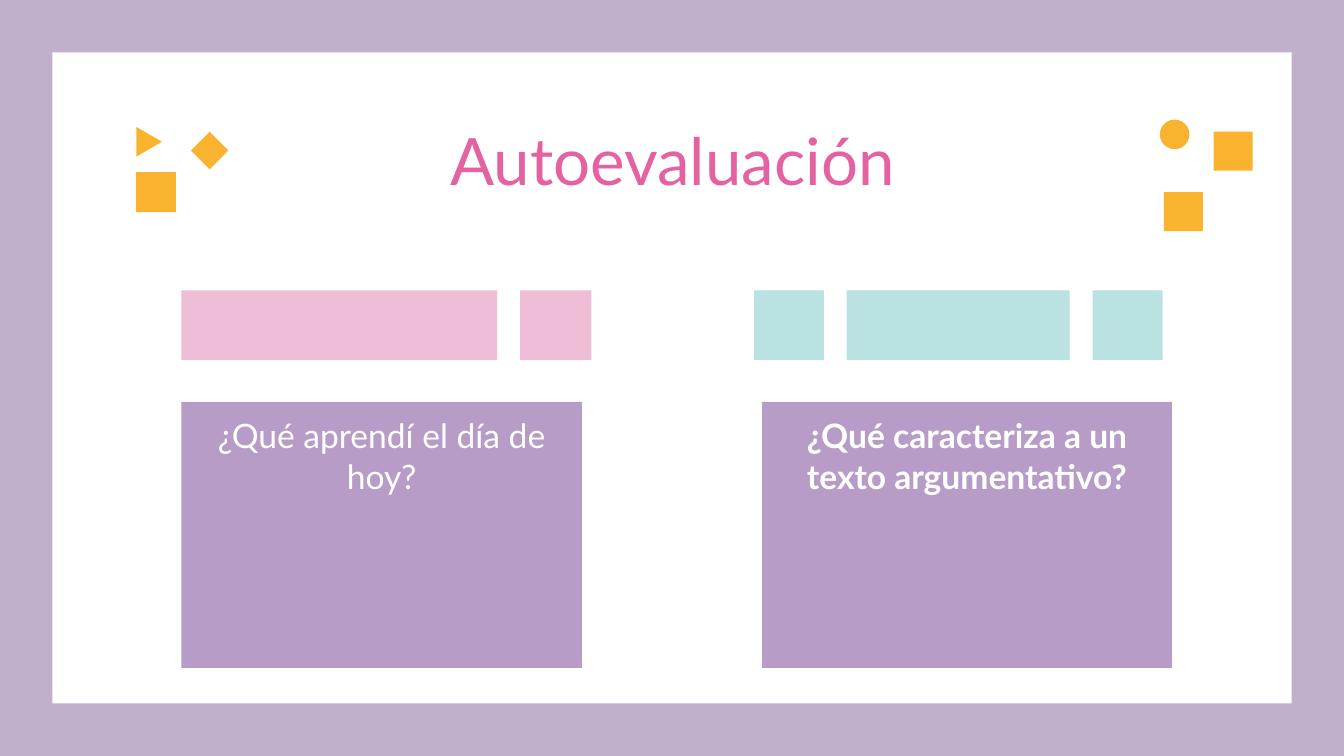
from pptx import Presentation
from pptx.dml.color import RGBColor
from pptx.enum.shapes import MSO_SHAPE
from pptx.enum.text import MSO_ANCHOR, PP_ALIGN
from pptx.util import Inches, Pt

COLORS = {
    "frame": "C0B0CC",
    "page": "FFFFFF",
    "title": "E562A0",
    "card": "B89CC8",
    "card_text": "FFFFFF",
    "pink": "EEBDD6",
    "aqua": "BBE2E2",
    "accent": "FAB32E",
}
FONT = "Lato"
SLIDE_WIDTH, MARGIN = 10, 0.39
SLIDE_HEIGHT = SLIDE_WIDTH * 9 / 16

TITLE = ("Autoevaluación", (0.85, 0.91, 8.31, 0.63))
CARD_TOP, CARD_HEIGHT = 2.99, 1.98
CARDS = [
    ("¿Qué aprendí el día de hoy?", 1.35, 2.98, False),
    ("¿Qué caracteriza a un texto argumentativo?", 5.67, 3.05, True),
]
BAND_TOP, BAND_HEIGHT = 2.16, 0.52
BANDS = [
    ("pink", 1.35, 0.17, [2.35, 0.53]),
    ("aqua", 5.61, 0.17, [0.52, 1.66, 0.52]),
]
CONFETTI = [
    (MSO_SHAPE.DIAMOND, (0.95, 1.22, 0.42, 0.42), 315),
    (MSO_SHAPE.DIAMOND, (1.42, 0.98, 0.28, 0.28), 0),
    (MSO_SHAPE.ISOSCELES_TRIANGLE, (1, 0.96, 0.22, 0.19), 90),
    (MSO_SHAPE.RECTANGLE, (9.03, 0.98, 0.29, 0.29), 0),
    (MSO_SHAPE.RECTANGLE, (8.66, 1.43, 0.29, 0.29), 0),
    (MSO_SHAPE.OVAL, (8.63, 0.89, 0.22, 0.22), 0),
]


def add_block(slide, box, color, kind=MSO_SHAPE.RECTANGLE, rotation=0):
    block = slide.shapes.add_shape(kind, *map(Inches, box))
    block.shadow.inherit = False
    block.fill.solid()
    block.fill.fore_color.rgb = RGBColor.from_string(COLORS[color])
    block.line.fill.background()
    block.rotation = rotation
    return block


def write(shape, text, size, color, bold=False, spacing=1.0):
    frame = shape.text_frame
    frame.word_wrap = True
    frame.vertical_anchor = MSO_ANCHOR.TOP
    for side in ("left", "top", "right", "bottom"):
        setattr(frame, f"margin_{side}", Inches(0.1))
    paragraph = frame.paragraphs[0]
    paragraph.alignment = PP_ALIGN.CENTER
    paragraph.line_spacing = spacing
    run = paragraph.add_run()
    run.text = text
    for name, value in {"name": FONT, "size": Pt(size), "bold": bold}.items():
        setattr(run.font, name, value)
    run.font.color.rgb = RGBColor.from_string(COLORS[color])


prs = Presentation()
prs.slide_width, prs.slide_height = Inches(SLIDE_WIDTH), Inches(SLIDE_HEIGHT)
slide = prs.slides.add_slide(prs.slide_layouts[6])
slide.background.fill.solid()
slide.background.fill.fore_color.rgb = RGBColor.from_string(COLORS["frame"])

page = (MARGIN, MARGIN, SLIDE_WIDTH - 2 * MARGIN, SLIDE_HEIGHT - 2 * MARGIN)
add_block(slide, page, "page")

heading, heading_box = TITLE
title = slide.shapes.add_textbox(*map(Inches, heading_box))
write(title, heading, 35, "title", spacing=0.8)

for question, left, width, bold in CARDS:
    card = add_block(slide, (left, CARD_TOP, width, CARD_HEIGHT), "card")
    write(card, question, 18, "card_text", bold)

for color, left, gap, widths in BANDS:
    for width in widths:
        add_block(slide, (left, BAND_TOP, width, BAND_HEIGHT), color)
        left += width + gap

for kind, box, rotation in CONFETTI:
    add_block(slide, box, "accent", kind, rotation)

prs.save("out.pptx")
